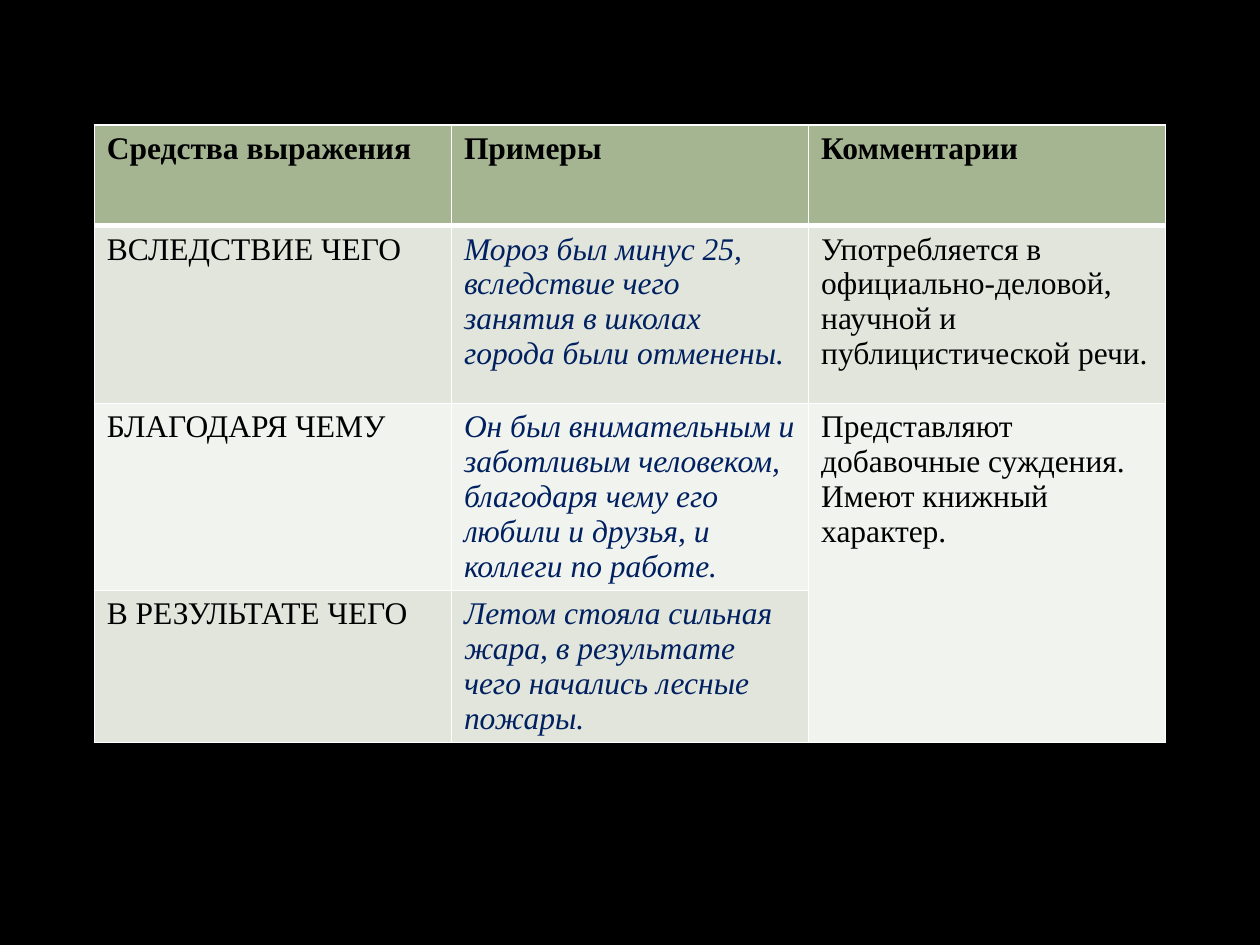
"""Build a slide with a table of Russian expressions of consequence."""
from dataclasses import dataclass

from lxml.etree import SubElement
from pptx import Presentation
from pptx.dml.color import RGBColor
from pptx.oxml.ns import qn
from pptx.util import Cm, Pt


@dataclass(frozen=True)
class Theme:
    background: str = "000000"
    header: str = "A5B592"
    bands: tuple = ("F0F3EE", "E1E5DC")
    text: str = "000000"
    example: str = "002060"
    border: str = "FFFFFF"
    font: str = "Times New Roman"
    size: int = 18
    thin: int = 1
    thick: int = 3


def add_border(cell, side, width):
    line = SubElement(cell._tc.get_or_add_tcPr(), qn(f"a:{side}"), w=str(Pt(width)))
    fill = SubElement(line, qn("a:solidFill"))
    SubElement(fill, qn("a:srgbClr"), val=theme.border)


theme = Theme()
rows = [
    ("Средства выражения", "Примеры", "Комментарии"),
    (
        "ВСЛЕДСТВИЕ ЧЕГО",
        "Мороз был минус 25, вследствие чего занятия в школах города были отменены.",
        "Употребляется в официально-деловой, научной и публицистической речи.",
    ),
    (
        "БЛАГОДАРЯ ЧЕМУ",
        "Он был внимательным и заботливым человеком, благодаря чему его любили и друзья, и коллеги по работе.",
        "Представляют добавочные суждения. Имеют книжный характер.",
    ),
    (
        "В РЕЗУЛЬТАТЕ ЧЕГО",
        "Летом стояла сильная жара, в результате чего начались лесные пожары.",
        "",
    ),
]
row_heights = (2.03, 3.58, 2.03, 2.03)

presentation = Presentation()
presentation.slide_width, presentation.slide_height = Cm(25.4), Cm(19.05)
slide = presentation.slides.add_slide(presentation.slide_layouts[6])
slide.background.fill.solid()
slide.background.fill.fore_color.rgb = RGBColor.from_string(theme.background)

expressions = slide.shapes.add_table(
    len(rows), len(rows[0]), Cm(1.9), Cm(2.52), Cm(21.6), Cm(sum(row_heights))
).table
for row, height in zip(expressions.rows, row_heights):
    row.height = Cm(height)
expressions.cell(2, 2).merge(expressions.cell(3, 2))

for row_index, row in enumerate(rows):
    is_header = row_index == 0
    for column_index, wording in enumerate(row):
        is_example = column_index == 1 and not is_header
        cell = expressions.cell(row_index, column_index)
        for side in ("lnL", "lnR", "lnT", "lnB"):
            meets_header = (row_index, side) in ((0, "lnB"), (1, "lnT"))
            add_border(cell, side, theme.thick if meets_header else theme.thin)
        cell.fill.solid()
        cell.fill.fore_color.rgb = RGBColor.from_string(
            theme.header if is_header else theme.bands[row_index % 2]
        )
        if not wording:
            continue
        cell.text = wording
        font = cell.text_frame.paragraphs[0].runs[0].font
        text_format = {
            "name": theme.font,
            "size": Pt(theme.size),
            "bold": is_header,
            "italic": is_example,
        }
        for attribute, setting in text_format.items():
            setattr(font, attribute, setting)
        font.color.rgb = RGBColor.from_string(theme.example if is_example else theme.text)

presentation.save("out.pptx")
